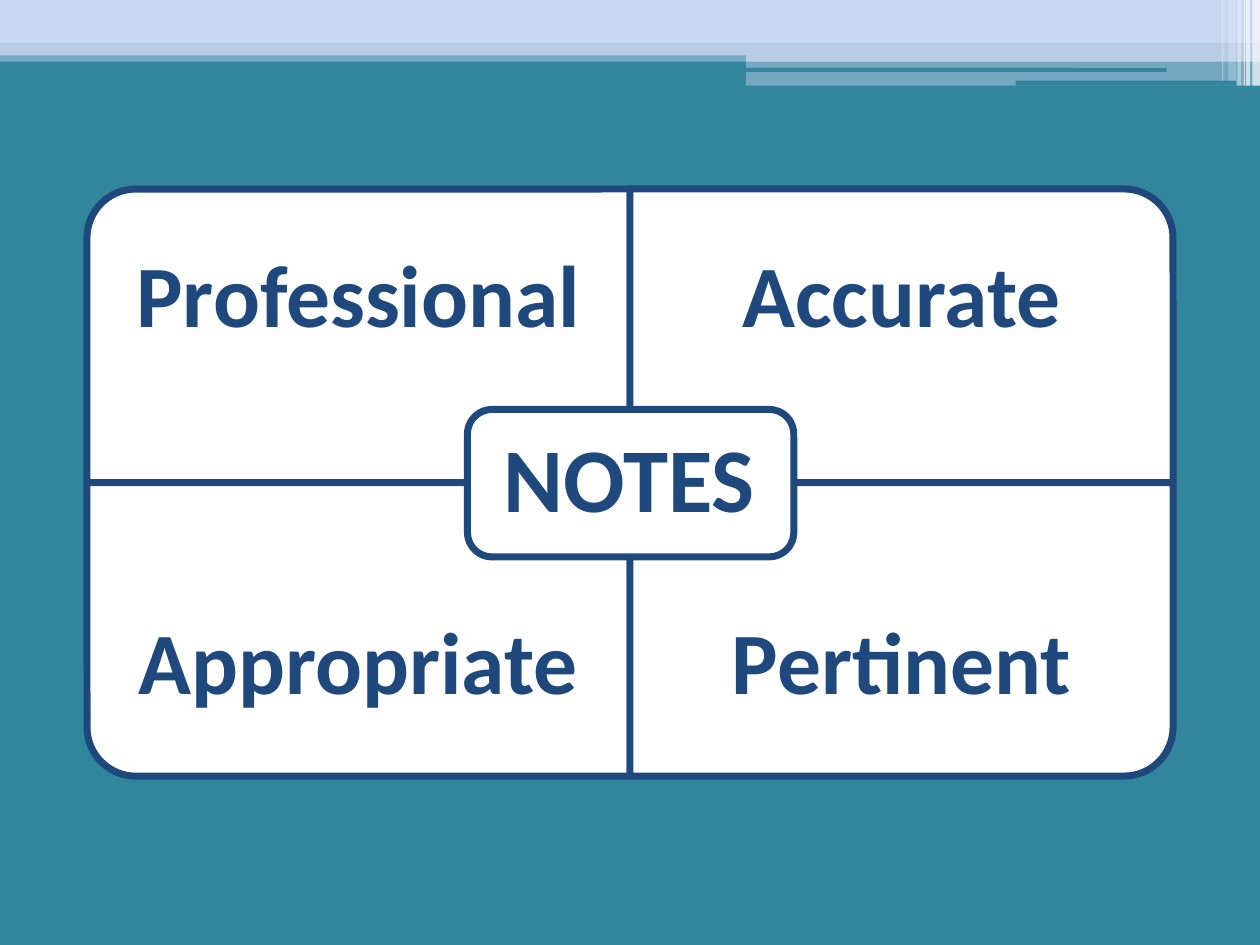
from lxml.etree import SubElement
from pptx import Presentation
from pptx.dml.color import RGBColor
from pptx.enum.shapes import MSO_SHAPE as Shape
from pptx.enum.text import MSO_ANCHOR as Anchor, PP_ALIGN as Align
from pptx.oxml.ns import qn
from pptx.util import Inches, Pt

TEAL = RGBColor(0x31, 0x85, 0x9C)
PALE = RGBColor(0xC6, 0xD9, 0xF0)
MIST = RGBColor(0xB8, 0xCC, 0xE4)
NAVY = RGBColor(0x1F, 0x49, 0x7D)
WHITE = RGBColor(0xFF, 0xFF, 0xFF)

BANDS = [
    (0, 0.4, 10, 0.09, MIST, 50),
    (0, 0, 10, 0.34, PALE, 100),
    (0, 0.34, 10, 0.1, MIST, 100),
    (5.92, 0.39, 4.08, 0.1, MIST, 100),
    (5.92, 0.48, 4.08, 0.2, MIST, 50),
]
BARS = [(5.91, 0.54, 3.35, 0.03), (8.06, 0.64, 1.75, 0.04)]
STRIPES = [
    (9.94, 0.06, 0.68, 65),
    (9.89, 0.03, 0.68, 65),
    (9.87, 0.01, 0.68, 60),
    (9.82, 0.03, 0.68, 40),
    (9.75, 0.06, 0.64, 20),
    (9.7, 0.01, 0.64, 30),
]
CARDS = [
    ("Professional", 0, 0, 270),
    ("Accurate", 1, 0, 0),
    ("Appropriate", 0, 1, 180),
    ("Pertinent", 1, 1, 90),
]
LEFT, TOP, WIDE, HIGH = 0.69, 1.5, 4.31, 2.33
TEXT_HIGH = 1.75


def add_block(slide, kind, box, color, alpha=100):
    """Add a filled shape without outline, opaque to alpha percent."""
    block = slide.shapes.add_shape(kind, *map(Inches, box))
    block.shadow.inherit = False
    block.line.fill.background()
    block.fill.solid()
    block.fill.fore_color.rgb = color
    if alpha < 100:
        tint = block.fill._xPr.find(".//" + qn("a:srgbClr"))
        SubElement(tint, qn("a:alpha"), val=str(alpha * 1000))
    return block


def add_panel(slide, kind, box, turn=0):
    """Add a white panel with a navy outline that covers box once turned."""
    left, top, wide, high = box
    if turn % 180:
        shift = (wide - high) / 2
        box = (left + shift, top - shift, high, wide)
    panel = add_block(slide, kind, box, WHITE)
    panel.rotation = turn
    panel.line.color.rgb = NAVY
    panel.line.width = Pt(4)


def add_label(slide, text, box, size, inset):
    """Add a centred bold label."""
    frame = slide.shapes.add_textbox(*map(Inches, box)).text_frame
    frame.word_wrap = True
    frame.vertical_anchor = Anchor.MIDDLE
    frame.margin_left = frame.margin_right = Inches(inset)
    frame.margin_top = frame.margin_bottom = Inches(inset)
    para = frame.paragraphs[0]
    para.alignment = Align.CENTER
    para.line_spacing = 0.9
    run = para.add_run()
    run.text = text
    run.font.name = "Calibri"
    run.font.size = Pt(size)
    run.font.bold = True
    run.font.color.rgb = NAVY


def add_header(slide):
    """Draw the layered bands, bars and stripes along the top edge."""
    for *box, color, alpha in BANDS:
        add_block(slide, Shape.RECTANGLE, box, color, alpha)
    for box in BARS:
        add_block(slide, Shape.ROUNDED_RECTANGLE, box, TEAL)
    for left, wide, high, alpha in STRIPES:
        add_block(slide, Shape.RECTANGLE, (left, 0, wide, high), WHITE, alpha)


def add_matrix(slide):
    """Draw the four cards and the hub over their shared corner."""
    for text, col, row, turn in CARDS:
        left, top = LEFT + col * WIDE, TOP + row * HIGH
        add_panel(slide, Shape.ROUND_1_RECTANGLE, (left, top, WIDE, HIGH), turn)
        drop = row * (HIGH - TEXT_HIGH)
        add_label(slide, text, (left, top + drop, WIDE, TEXT_HIGH), 50, 0.39)
    add_panel(slide, Shape.ROUNDED_RECTANGLE, (3.71, 3.25, 2.59, 1.17))
    add_label(slide, "NOTES", (3.76, 3.31, 2.47, 1.05), 52, 0.22)


def main():
    """Build and save the slide."""
    deck = Presentation()
    deck.slide_width, deck.slide_height = Inches(10), Inches(7.5)
    slide = deck.slides.add_slide(deck.slide_layouts[6])
    slide.background.fill.solid()
    slide.background.fill.fore_color.rgb = TEAL
    add_header(slide)
    add_matrix(slide)
    deck.save("out.pptx")


if __name__ == "__main__":
    main()
